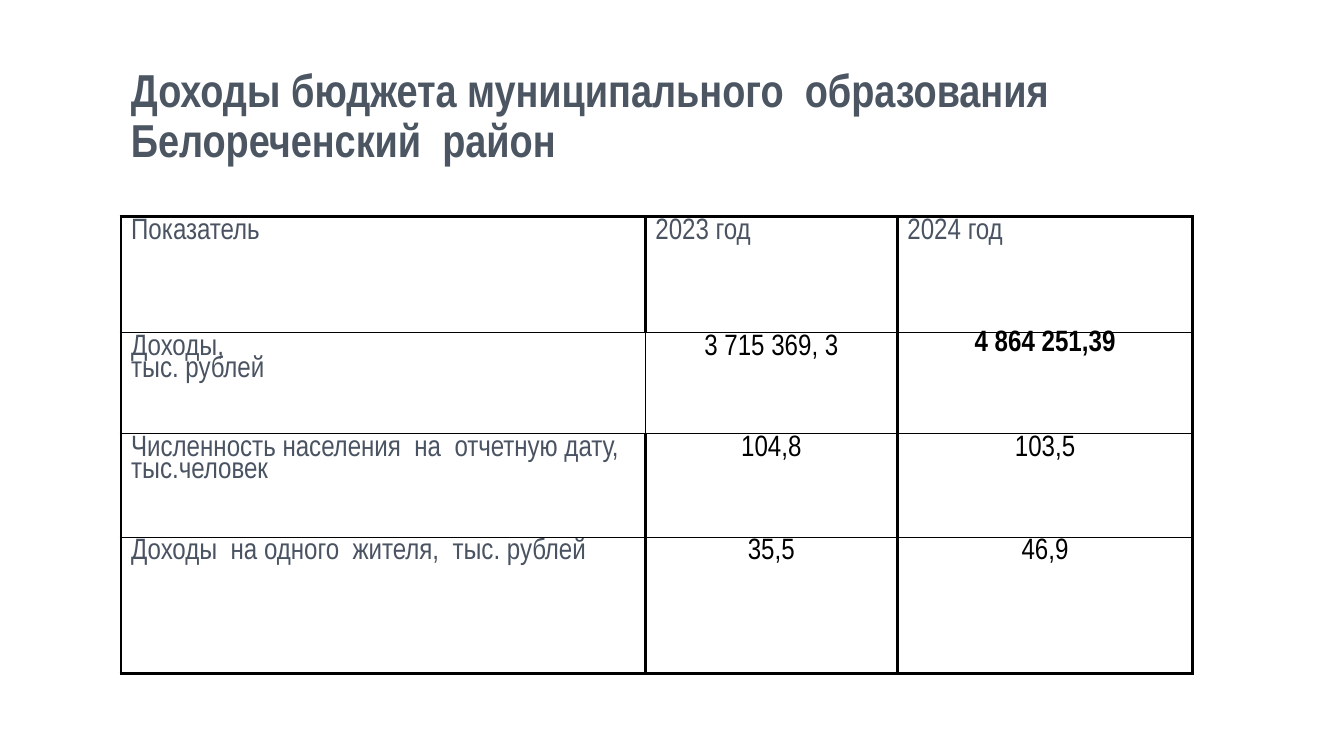
from dataclasses import dataclass

from lxml import etree
from pptx import Presentation
from pptx.dml.color import RGBColor
from pptx.enum.text import MSO_ANCHOR, PP_ALIGN
from pptx.oxml.ns import qn
from pptx.util import Inches, Pt

CENTER = PP_ALIGN.CENTER
LEFT = PP_ALIGN.LEFT
MIDDLE = MSO_ANCHOR.MIDDLE
TOP = MSO_ANCHOR.TOP


@dataclass(frozen=True)
class Theme:
    font: str = "Arial Narrow"
    title_color: str = "4C5662"
    label_color: str = "4A5362"
    value_color: str = "000000"
    border_color: str = "000000"
    title_size: float = 33
    table_size: float = 21
    title_spacing: float = 0.9
    table_spacing: float = 0.8
    thick: float = 2.25
    thin: float = 1


THEME = Theme()

TITLE = "Доходы бюджета муниципального  образования Белореченский  район"
COLUMN_WIDTHS = (5.2, 2.5, 2.93)
ROW_HEIGHTS = (1.15, 1, 1.03, 1.35)
ROWS = (
    ("Показатель", "2023 год", "2024 год"),
    ("Доходы,\nтыс. рублей", "3 715 369, 3", "4 864 251,39"),
    ("Численность населения  на  отчетную дату, тыс.человек", "104,8", "103,5"),
    ("Доходы  на одного  жителя,  тыс. рублей", "35,5", "46,9"),
)
INCOME_ROW = 1
HIGHLIGHT = (INCOME_ROW, 2)


def write_text(frame, text, size, color, spacing, bold=False, align=LEFT):
    """Fill a text frame with one paragraph per line of text."""
    for index, line in enumerate(text.split("\n")):
        paragraph = frame.add_paragraph() if index else frame.paragraphs[0]
        paragraph.alignment = align
        paragraph.line_spacing = spacing
        run = paragraph.add_run()
        run.text = line
        run.font.name = THEME.font
        run.font.size = Pt(size)
        run.font.bold = bold
        run.font.color.rgb = RGBColor.from_string(color)


def add_title(slide):
    shape = slide.shapes.add_textbox(Inches(1.2), Inches(0.42), Inches(9.97), Inches(1.5))
    frame = shape.text_frame
    frame.word_wrap = True
    frame.vertical_anchor = MIDDLE
    write_text(frame, TITLE, THEME.title_size, THEME.title_color,
               THEME.title_spacing, bold=True)


def set_margins(cell, left, top, right, bottom):
    cell.margin_left, cell.margin_top = Inches(left), Inches(top)
    cell.margin_right, cell.margin_bottom = Inches(right), Inches(bottom)


def border_widths(row, column):
    """Inner horizontal rules and the first divider of the income row are thin."""
    return {
        "a:lnL": THEME.thin if (row, column) == (INCOME_ROW, 1) else THEME.thick,
        "a:lnR": THEME.thin if (row, column) == (INCOME_ROW, 0) else THEME.thick,
        "a:lnT": THEME.thick if row == 0 else THEME.thin,
        "a:lnB": THEME.thick if row == len(ROWS) - 1 else THEME.thin,
    }


def set_borders(cell, widths):
    properties = cell._tc.get_or_add_tcPr()
    for index, (side, width) in enumerate(widths.items()):
        line = etree.Element(qn(side), w=str(Pt(width)))
        fill = etree.SubElement(line, qn("a:solidFill"))
        etree.SubElement(fill, qn("a:srgbClr"), val=THEME.border_color)
        properties.insert(index, line)


def fill_cell(cell, row, column, text):
    is_value = row > 0 and column > 0
    highlighted = (row, column) == HIGHLIGHT
    cell.fill.background()
    cell.vertical_anchor = TOP
    if highlighted:
        set_margins(cell, 0.01, 0.01, 0.01, 0)
    else:
        set_margins(cell, 0.1, 0.05, 0.1, 0.05)
    write_text(cell.text_frame, text, THEME.table_size,
               THEME.value_color if is_value else THEME.label_color,
               THEME.table_spacing, bold=highlighted,
               align=CENTER if is_value else LEFT)
    set_borders(cell, border_widths(row, column))


def add_income_table(slide):
    table = slide.shapes.add_table(
        len(ROWS), len(COLUMN_WIDTHS), Inches(1.2), Inches(2.15),
        Inches(sum(COLUMN_WIDTHS)), Inches(sum(ROW_HEIGHTS))).table
    table.first_row = False
    table.horz_banding = False
    for column, width in zip(table.columns, COLUMN_WIDTHS):
        column.width = Inches(width)
    for row, height in zip(table.rows, ROW_HEIGHTS):
        row.height = Inches(height)
    for row, texts in enumerate(ROWS):
        for column, text in enumerate(texts):
            fill_cell(table.cell(row, column), row, column, text)


def main():
    presentation = Presentation()
    presentation.slide_width = Inches(13.33)
    presentation.slide_height = Inches(7.5)
    slide = presentation.slides.add_slide(presentation.slide_layouts[6])
    add_title(slide)
    add_income_table(slide)
    presentation.save("out.pptx")


if __name__ == "__main__":
    main()
